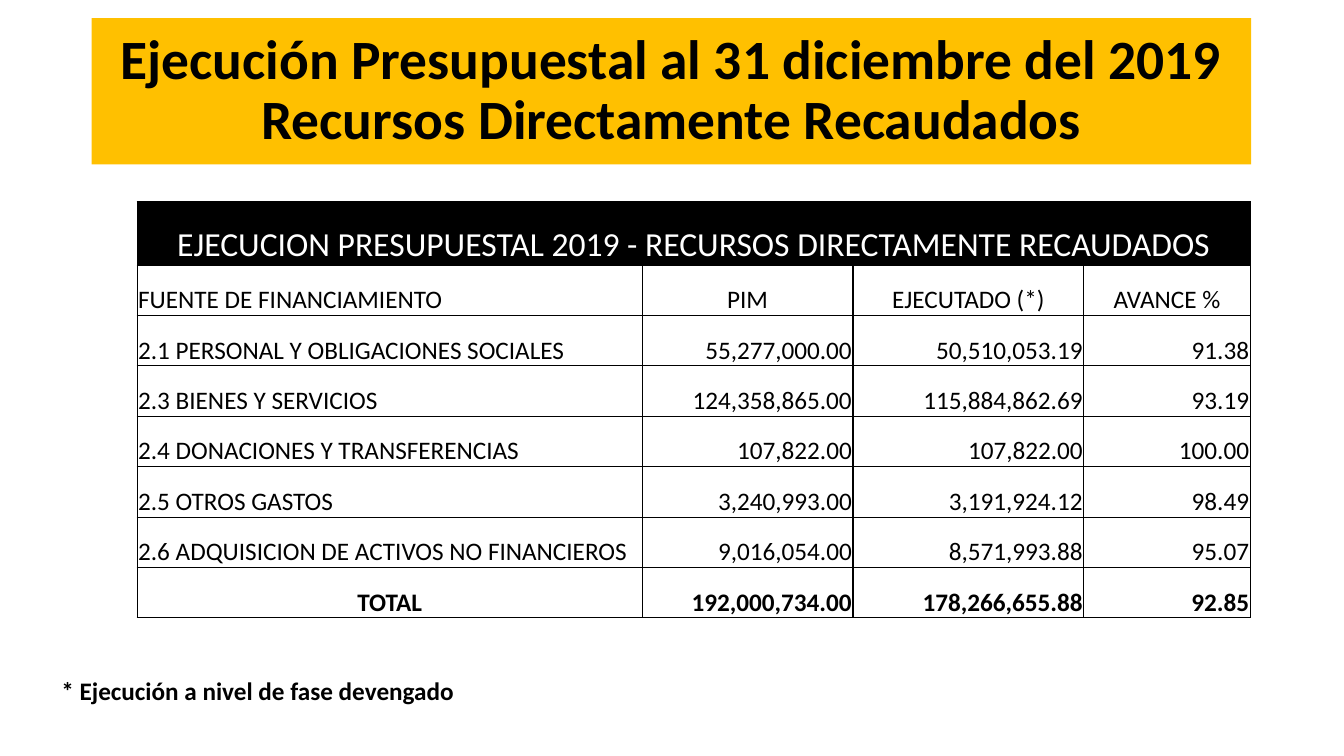
from dataclasses import dataclass

from lxml import etree
from pptx import Presentation
from pptx.dml.color import RGBColor
from pptx.enum.shapes import MSO_SHAPE
from pptx.enum.text import MSO_ANCHOR, MSO_AUTO_SIZE, PP_ALIGN
from pptx.oxml.ns import qn
from pptx.table import _Cell
from pptx.text.text import TextFrame
from pptx.util import Inches, Pt

LEFT, CENTER, RIGHT = PP_ALIGN.LEFT, PP_ALIGN.CENTER, PP_ALIGN.RIGHT
MIDDLE, BOTTOM = MSO_ANCHOR.MIDDLE, MSO_ANCHOR.BOTTOM
RECTANGLE = MSO_SHAPE.RECTANGLE
FIT_SHAPE = MSO_AUTO_SIZE.SHAPE_TO_FIT_TEXT

FONT = "Calibri"
COLORS = {"banner": "FFC000", "ink": "000000", "paper": "FFFFFF"}
COLUMN_WIDTHS = (5.01, 2.09, 2.29, 1.65)
HEADING_HEIGHT, ROW_HEIGHT = 0.63, 0.5


@dataclass
class BudgetRow:
    source: str
    budget: str
    executed: str
    progress: str
    source_align: PP_ALIGN = LEFT
    value_align: PP_ALIGN = RIGHT
    bold: bool = False


BUDGET_ROWS = [
    BudgetRow("FUENTE DE FINANCIAMIENTO", "PIM", "EJECUTADO (*)", "AVANCE %", value_align=CENTER),
    BudgetRow("2.1 PERSONAL Y OBLIGACIONES SOCIALES", "55,277,000.00", "50,510,053.19", "91.38"),
    BudgetRow("2.3 BIENES Y SERVICIOS", "124,358,865.00", "115,884,862.69", "93.19"),
    BudgetRow("2.4 DONACIONES Y TRANSFERENCIAS", "107,822.00", "107,822.00", "100.00"),
    BudgetRow("2.5 OTROS GASTOS", "3,240,993.00", "3,191,924.12", "98.49"),
    BudgetRow("2.6 ADQUISICION DE ACTIVOS NO FINANCIEROS", "9,016,054.00", "8,571,993.88", "95.07"),
    BudgetRow("TOTAL", "192,000,734.00", "178,266,655.88", "92.85", source_align=CENTER, bold=True),
]


def write_text(frame: TextFrame, text: str, *, size: float = 18, color: str = "ink",
               bold: bool = False, align: PP_ALIGN = LEFT, spacing: float = 1.0) -> None:
    paragraph = frame.paragraphs[0]
    paragraph.text = text
    paragraph.alignment = align
    paragraph.line_spacing = spacing
    for run in paragraph.runs:
        run.font.name = FONT
        run.font.size = Pt(size)
        run.font.bold = bold
        run.font.color.rgb = RGBColor.from_string(COLORS[color])


def format_cell(cell: _Cell, fill: str | None = None) -> None:
    """Set the margins, anchor, thin black borders and fill."""
    cell.margin_left = cell.margin_right = cell.margin_top = Inches(0.01)
    cell.margin_bottom = 0
    cell.vertical_anchor = BOTTOM
    properties = cell._tc.get_or_add_tcPr()
    for side in ("a:lnL", "a:lnR", "a:lnT", "a:lnB"):
        border = etree.SubElement(properties, qn(side), w=str(Pt(1)))
        solid = etree.SubElement(border, qn("a:solidFill"))
        etree.SubElement(solid, qn("a:srgbClr"), val=COLORS["ink"])
    if fill:
        cell.fill.solid()
        cell.fill.fore_color.rgb = RGBColor.from_string(COLORS[fill])
    else:
        cell.fill.background()


def main() -> None:
    presentation = Presentation()
    presentation.slide_width, presentation.slide_height = Inches(13.33), Inches(7.5)
    slide = presentation.slides.add_slide(presentation.slide_layouts[6])

    # Title banner
    banner = slide.shapes.add_shape(
        RECTANGLE, Inches(0.91), Inches(0.18), Inches(11.5), Inches(1.45))
    banner.shadow.inherit = False
    banner.fill.solid()
    banner.fill.fore_color.rgb = RGBColor.from_string(COLORS["banner"])
    banner.line.fill.background()
    banner.text_frame.word_wrap = True
    banner.text_frame.vertical_anchor = MIDDLE
    write_text(banner.text_frame,
               "Ejecución Presupuestal al 31 diciembre del 2019\vRecursos Directamente Recaudados",
               size=39.6, bold=True, align=CENTER, spacing=0.9)

    # Footnote
    footnote = slide.shapes.add_textbox(Inches(0.51), Inches(6.65), Inches(4.19), Inches(0.4))
    footnote.text_frame.word_wrap = False
    footnote.text_frame.auto_size = FIT_SHAPE
    write_text(footnote.text_frame, "* Ejecución a nivel de fase devengado", bold=True)

    # Budget table
    table_height = HEADING_HEIGHT + ROW_HEIGHT * len(BUDGET_ROWS)
    budget = slide.shapes.add_table(
        len(BUDGET_ROWS) + 1, len(COLUMN_WIDTHS), Inches(1.36), Inches(2),
        Inches(sum(COLUMN_WIDTHS)), Inches(table_height)).table
    budget.first_row = budget.horz_banding = False
    for column, width in zip(budget.columns, COLUMN_WIDTHS):
        column.width = Inches(width)
    for row in budget.rows:
        row.height = Inches(ROW_HEIGHT)
    budget.rows[0].height = Inches(HEADING_HEIGHT)

    # Table heading
    for cell in budget.rows[0].cells:
        format_cell(cell, "ink")
    heading = budget.cell(0, 0)
    heading.merge(budget.cell(0, len(COLUMN_WIDTHS) - 1))
    write_text(heading.text_frame,
               "EJECUCION PRESUPUESTAL 2019 - RECURSOS DIRECTAMENTE RECAUDADOS",
               size=24, color="paper", align=CENTER)

    # Table body
    for row_number, entry in enumerate(BUDGET_ROWS, start=1):
        texts = (entry.source, entry.budget, entry.executed, entry.progress)
        for column_number, text in enumerate(texts):
            cell = budget.cell(row_number, column_number)
            format_cell(cell)
            write_text(cell.text_frame, text, bold=entry.bold,
                       align=entry.value_align if column_number else entry.source_align)

    presentation.save("out.pptx")


if __name__ == "__main__":
    main()
